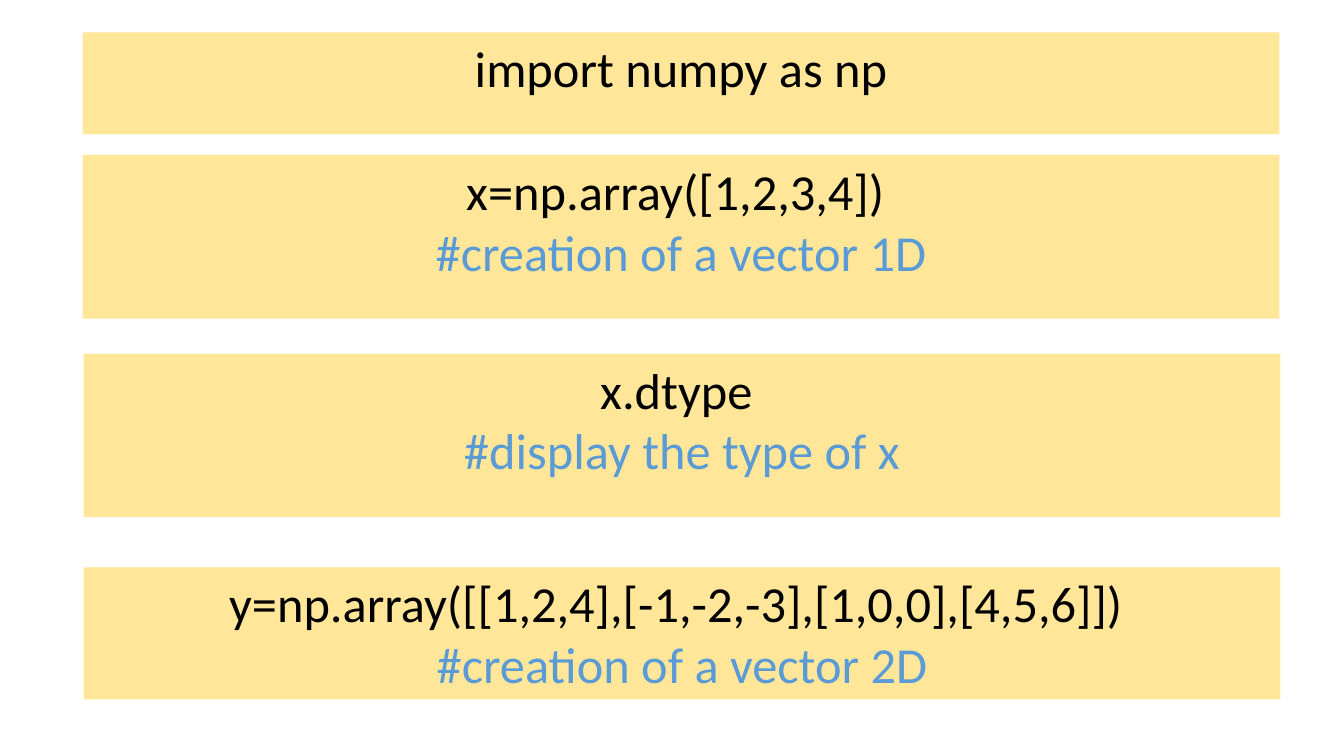
from pptx import Presentation
from pptx.dml.color import RGBColor
from pptx.enum import text
from pptx.util import Inches, Pt

COLORS = {"panel": "FFE699", "code": "000000", "comment": "5B9BD5"}
FONT, SIZE = "Calibri", 36
PANEL_WIDTH = 11.87

# left, top, height, lines of (kind, wording)
PANELS = [
    (0.82, 0.32, 1.01, [("code", "import numpy as np")]),
    (0.82, 1.54, 1.62, [("code", "x=np.array([1,2,3,4]) "),
                        ("comment", "#creation of a vector 1D")]),
    (0.83, 3.51, 1.62, [("code", "x.dtype "),
                        ("comment", "#display the type of x")]),
    (0.83, 5.63, 1.31, [("code", "y=np.array([[1,2,4],[-1,-2,-3],[1,0,0],[4,5,6]]) "),
                        ("comment", "#creation of a vector 2D")]),
]


def add_panel(page, left, top, height, lines):
    box = page.shapes.add_textbox(
        Inches(left), Inches(top), Inches(PANEL_WIDTH), Inches(height))
    box.fill.solid()
    box.fill.fore_color.rgb = RGBColor.from_string(COLORS["panel"])
    frame = box.text_frame
    frame.word_wrap = True
    frame.vertical_anchor = text.MSO_ANCHOR.TOP
    for number, (kind, wording) in enumerate(lines):
        para = frame.add_paragraph() if number else frame.paragraphs[0]
        para.alignment = text.PP_ALIGN.CENTER
        span = para.add_run()
        span.text = wording
        span.font.name = FONT
        span.font.size = Pt(SIZE)
        span.font.color.rgb = RGBColor.from_string(COLORS[kind])


def main():
    deck = Presentation()
    deck.slide_width, deck.slide_height = Inches(13.33), Inches(7.5)
    page = deck.slides.add_slide(deck.slide_layouts.get_by_name("Blank"))
    for panel in PANELS:
        add_panel(page, *panel)
    deck.save("out.pptx")


if __name__ == "__main__":
    main()
